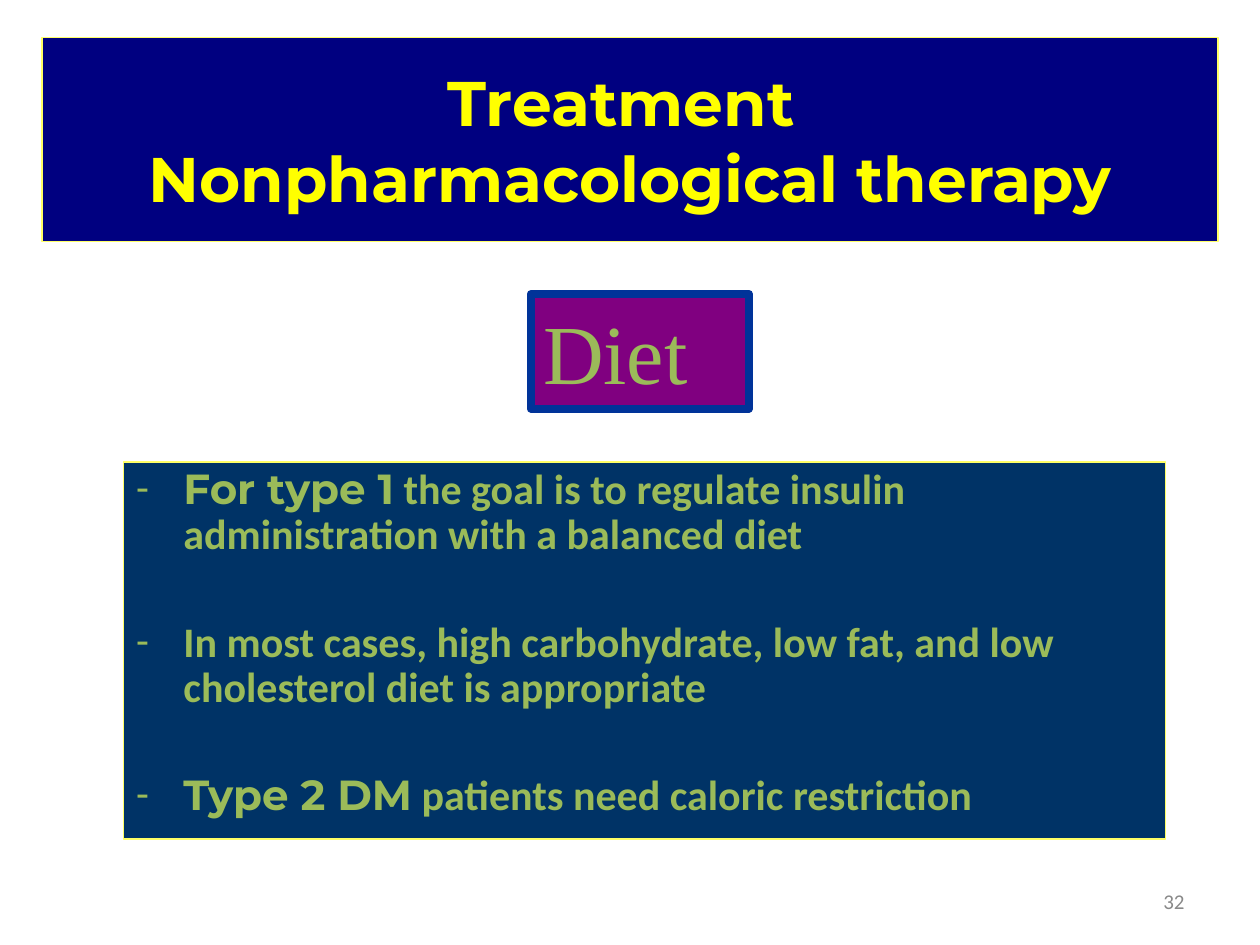
from dataclasses import dataclass, field
from lxml import etree
from pptx import Presentation
from pptx import util as u
from pptx.dml.color import RGBColor
from pptx.enum import shapes, text
from pptx.oxml import ns

HUES = {"navy": "000080", "deep": "003366", "plum": "800080", "edge": "003399",
        "pale": "FFFF66", "sun": "FFFF00", "leaf": "9BBB59", "gray": "898989"}
HEAD, BODY, SERIF = "Montserrat", "Calibri", "Times New Roman"
HANG = 27


@dataclass
class Para:
    runs: list[tuple[str, str]]  # (words, font)
    form: dict = field(default_factory=dict)
    dash: bool = False


@dataclass
class Panel:
    left: float
    top: float
    width: float
    height: float
    paras: list[Para]
    size: int
    hue: str
    bold: bool = False
    mid: bool = False
    fill: str = ""
    edge: str = ""
    weight: float = 0.75


def tint(name: str) -> RGBColor:
    return RGBColor.from_string(HUES[name])


def apply(item, form: dict) -> None:
    for key, value in form.items():
        setattr(item, key, value)


def indent(para) -> None:
    """Give a paragraph a hanging indent and a dash bullet."""
    props = para._p.get_or_add_pPr()
    props.set("marL", str(u.Pt(HANG)))
    props.set("indent", str(-u.Pt(HANG)))
    for tag, key, value in (("a:buFont", "typeface", BODY), ("a:buChar", "char", "-")):
        etree.SubElement(props, ns.qn(tag)).set(key, value)


def write(frame, panel: Panel) -> None:
    anchor = text.MSO_ANCHOR.MIDDLE if panel.mid else text.MSO_ANCHOR.TOP
    apply(frame, {"word_wrap": True, "vertical_anchor": anchor})
    for i, item in enumerate(panel.paras):
        para = frame.add_paragraph() if i else frame.paragraphs[0]
        apply(para, item.form)
        if item.dash:
            indent(para)
        for j, (words, face) in enumerate(item.runs):
            for k, line in enumerate(words.split("\n")):
                if k:
                    para.add_line_break()
                run = para.add_run()
                run.text = line
                apply(run.font, {"name": face, "size": u.Pt(panel.size), "bold": panel.bold})
                run.font.color.rgb = tint(panel.hue)


def draw(slide, panel: Panel) -> None:
    spot = [u.Pt(n) for n in (panel.left, panel.top, panel.width, panel.height)]
    if panel.fill:
        shape = slide.shapes.add_shape(shapes.MSO_SHAPE.RECTANGLE, *spot)
        shape.shadow.inherit = False
        shape.fill.solid()
        shape.fill.fore_color.rgb = tint(panel.fill)
        shape.line.color.rgb = tint(panel.edge)
        shape.line.width = u.Pt(panel.weight)
    else:
        shape = slide.shapes.add_textbox(*spot)
    write(shape.text_frame, panel)


def point(runs: list[tuple[str, str]], gap: float) -> Para:
    form = {"alignment": text.PP_ALIGN.LEFT, "line_spacing": 0.9, "space_before": u.Pt(gap)}
    return Para(runs, form, dash=True)


POINTS = [
    [("For type 1", HEAD),
     (" the goal is to regulate insulin administration with a balanced diet", BODY)],
    [("In most cases, high carbohydrate, low fat, and low cholesterol diet is appropriate", BODY)],
    [("Type 2 DM", HEAD), (" patients need caloric restriction", BODY)],
]
PANELS = [
    Panel(516, 500.5, 168, 28.75,
          [Para([("32", BODY)], {"alignment": text.PP_ALIGN.RIGHT})], 12, "gray", mid=True),
    Panel(24, 21.5, 672, 116.5,
          [Para([("Treatment \nNonpharmacological therapy", HEAD)],
                {"alignment": text.PP_ALIGN.CENTER})],
          36, "sun", bold=True, mid=True, fill="navy", edge="pale"),
    Panel(70.75, 264, 595.25, 215.5,
          [point(runs, 35.5 if i else 2.5) for i, runs in enumerate(POINTS)],
          24, "leaf", bold=True, fill="deep", edge="pale"),
    Panel(303.25, 168, 124.75, 65.5,
          [Para([("Diet", SERIF)],
                {"alignment": text.PP_ALIGN.LEFT, "space_before": u.Pt(5.5)})],
          48, "leaf", fill="plum", edge="edge", weight=4.5),
]


def main() -> None:
    deck = Presentation()
    apply(deck, {"slide_width": u.Pt(720), "slide_height": u.Pt(540)})
    slide = deck.slides.add_slide(deck.slide_layouts[6])
    for panel in PANELS:
        draw(slide, panel)
    deck.save("out.pptx")


if __name__ == "__main__":
    main()
